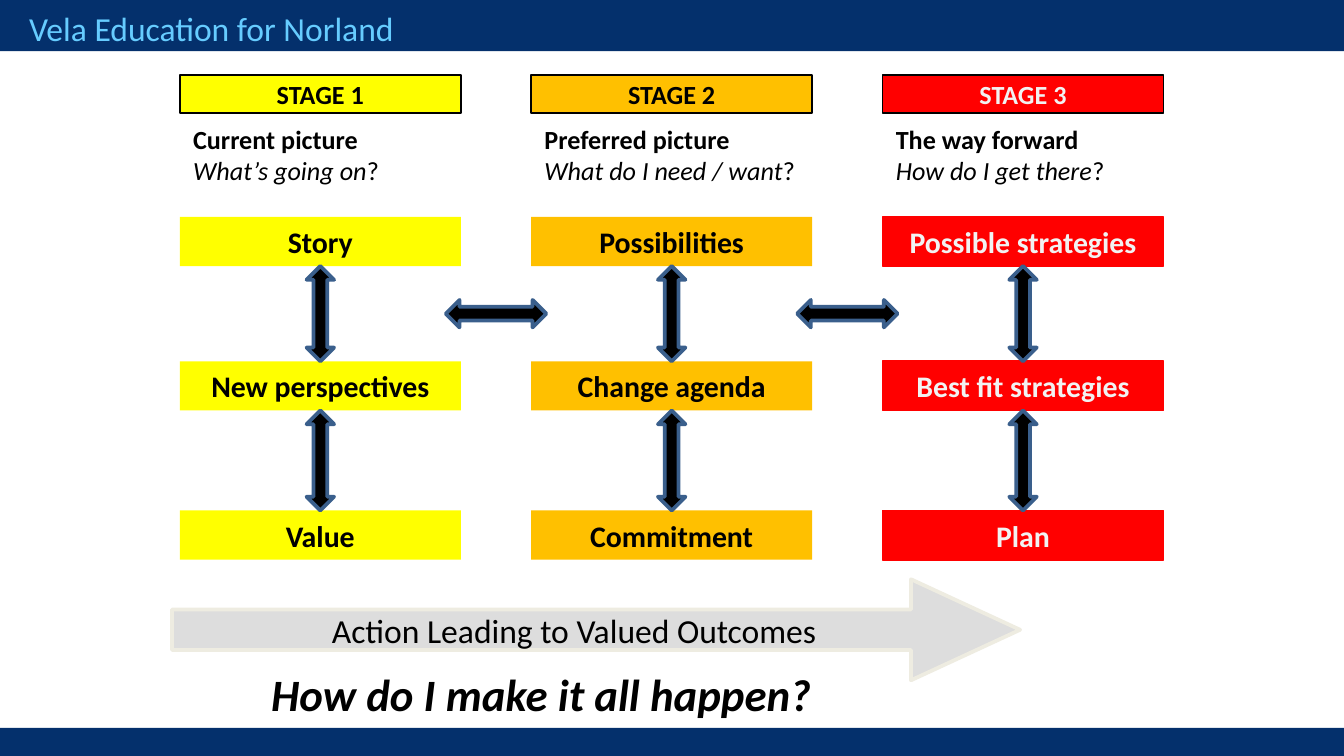
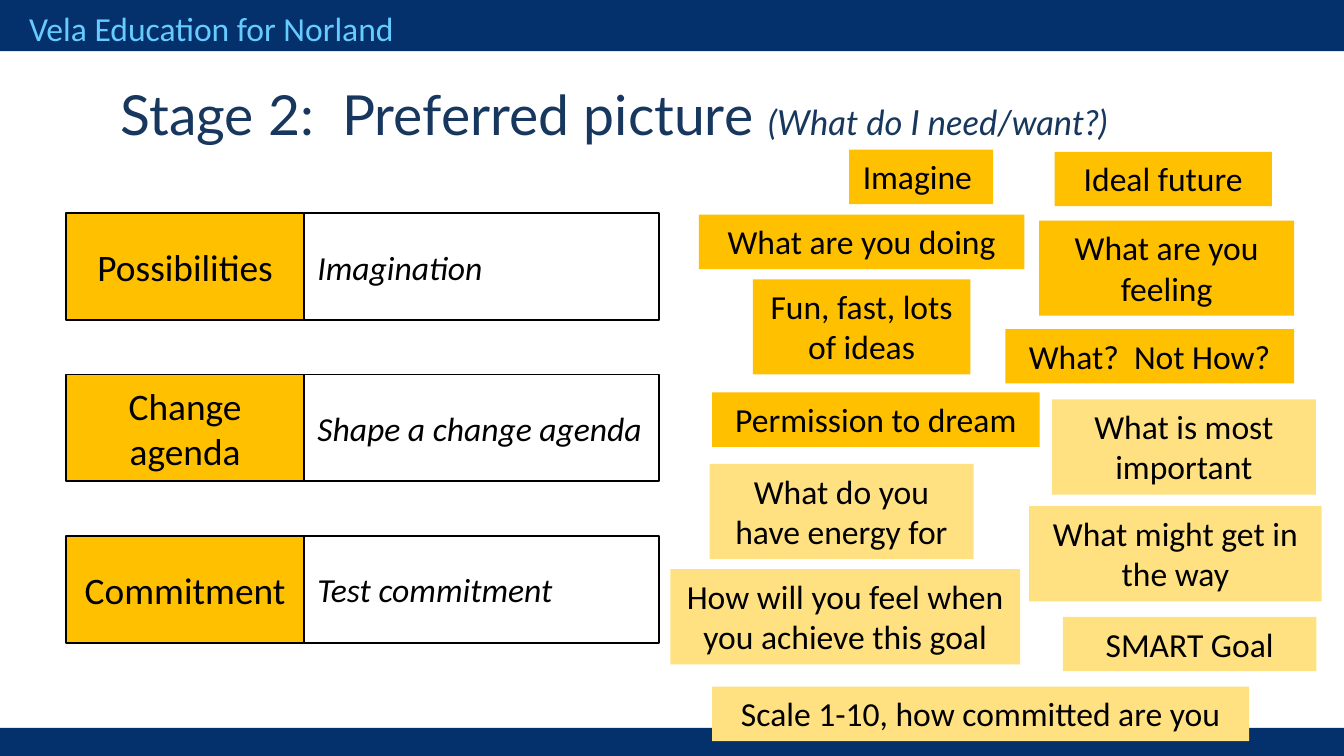
from dataclasses import dataclass
from typing import NamedTuple

from pptx import Presentation
from pptx.dml.color import RGBColor
from pptx.enum.shapes import MSO_SHAPE
from pptx.enum.text import MSO_ANCHOR, PP_ALIGN
from pptx.util import Cm, Pt


@dataclass(frozen=True)
class Theme:
    navy: str = "04306C"
    sky: str = "66CCFF"
    title: str = "17375E"
    black: str = "000000"
    pale: str = "F2F2F2"
    yellow: str = "FFFF00"
    amber: str = "FFC000"
    light_amber: str = "FFE181"
    red: str = "FF0000"
    arrow_line: str = "3A5F8C"
    grey: str = "DDDDDD"
    cream: str = "EEECE1"
    font: str = "Calibri"
    title_font: str = "Lato"
    small: float = 14
    step: float = 16
    body: float = 18
    label: float = 20
    question: float = 24
    heading: float = 29.6
    subheading: float = 18.5


T = Theme()


class Box(NamedTuple):
    x: float
    y: float
    w: float
    h: float

    def inner(self, dx, dy, w, h):
        """Return a box offset from this box's top left corner."""
        return Box(self.x + dx, self.y + dy, w, h)

    def lengths(self):
        return [Cm(v) for v in self]


class Run(NamedTuple):
    text: str
    size: float = T.body
    color: str = T.black
    bold: bool = False
    italic: bool = False
    font: str = T.font


class Stage(NamedTuple):
    name: str
    heading: str
    question: str
    steps: tuple
    fill: str
    ink: str = T.black
    step_line: str | None = None


class Note(NamedTuple):
    text: str
    dx: float
    dy: float
    w: float
    lines: int = 1
    fill: str = T.amber


PAGE = Box(0, 0, 25.4, 14.29)

STAGES = (
    Stage("STAGE 1", "Current picture", "What’s going on",
          ("Story", "New perspectives", "Value"), T.yellow),
    Stage("STAGE 2", "Preferred picture", "What do I need / want",
          ("Possibilities", "Change agenda", "Commitment"), T.amber),
    Stage("STAGE 3", "The way forward", "How do I get there",
          ("Possible strategies", "Best fit strategies", "Plan"), T.red, T.pale, T.red),
)
COLUMN_W, COLUMN_PITCH = 5.31, 6.64
STEP_TOPS, STEP_H = (2.68, 5.41, 8.23), 0.93
ARROW_THICK, ARROW_LONG = 0.52, 1.9

AIMS = (
    ("Possibilities", "Imagination"),
    ("Change agenda", "Shape a change agenda"),
    ("Commitment", "Test commitment"),
)

NOTES = (
    Note("Imagine ", 3.38, 0, 2.72),
    Note("Ideal future", 7.26, 0.04, 4.11),
    Note("What are you doing", 0.54, 1.23, 6.15),
    Note("What are you feeling", 6.97, 1.34, 4.82, 2),
    Note("What?  Not How?", 6.33, 3.39, 5.46),
    Note("Fun, fast, lots of ideas", 1.56, 2.45, 4.11, 2),
    Note("Permission to dream", 0.79, 4.59, 6.19),
    Note("What is most important", 7.21, 4.72, 4.99, 2, T.light_amber),
    Note("SMART Goal", 7.42, 8.83, 4.79, 1, T.light_amber),
    Note("How will you feel when you achieve this goal", 0, 7.93, 6.61, 2, T.light_amber),
    Note("What do you have energy for", 0.74, 5.94, 4.99, 2, T.light_amber),
    Note("What might get in the way", 6.78, 6.74, 5.53, 2, T.light_amber),
    Note("Scale 1-10, how committed are you", 0.79, 10.15, 10.15, 1, T.light_amber),
)


def write(sp, paragraphs, align=PP_ALIGN.LEFT, anchor=MSO_ANCHOR.TOP, wrap=True):
    tf = sp.text_frame
    tf.word_wrap = wrap
    tf.vertical_anchor = anchor
    for i, runs in enumerate(paragraphs):
        p = tf.paragraphs[0] if i == 0 else tf.add_paragraph()
        p.alignment = align
        for run in runs:
            r = p.add_run()
            r.text = run.text
            r.font.name = run.font
            r.font.size = Pt(run.size)
            r.font.bold = run.bold
            r.font.italic = run.italic
            r.font.color.rgb = RGBColor.from_string(run.color)


def add_text(s, box, *paragraphs, align=PP_ALIGN.LEFT):
    write(s.shapes.add_textbox(*box.lengths()), paragraphs, align)


def add_figure(s, box, fill=None, line=None, weight=1, kind=MSO_SHAPE.RECTANGLE):
    sp = s.shapes.add_shape(kind, *box.lengths())
    sp.shadow.inherit = False
    if fill:
        sp.fill.solid()
        sp.fill.fore_color.rgb = RGBColor.from_string(fill)
    else:
        sp.fill.background()
    if line:
        sp.line.color.rgb = RGBColor.from_string(line)
        sp.line.width = Pt(weight)
    else:
        sp.line.fill.background()
    return sp


def add_label(s, box, run, fill=None, line=None, align=PP_ALIGN.CENTER,
              anchor=MSO_ANCHOR.MIDDLE):
    write(add_figure(s, box, fill, line), [[run]], align, anchor)


def add_double_arrow(s, box, kind):
    add_figure(s, box, T.black, T.arrow_line, 2, kind)


def add_frame(s, box):
    """Draw the bands and organisation name found on every slide."""
    add_figure(s, box.inner(0, 0, box.w, 0.97), T.navy)
    add_figure(s, box.inner(0, box.h - 0.53, box.w, 0.53), T.navy)
    add_text(s, box.inner(0.3, 0.03, 10.8, 1.02),
             [Run("Vela Education for Norland", color=T.sky)])


def add_stage(s, box, stage):
    add_label(s, box.inner(0, 0, box.w, 0.71),
              Run(stage.name, T.small, stage.ink, bold=True), stage.fill, T.black)
    add_text(s, box.inner(0, 0.79, box.w, 1.45),
             [Run(stage.heading, T.small, bold=True)],
             [Run(stage.question, T.small, italic=True), Run("?", T.small)])
    for top, step in zip(STEP_TOPS, stage.steps):
        add_label(s, box.inner(0, top, box.w, STEP_H),
                  Run(step, T.step, stage.ink, bold=True), stage.fill, stage.step_line)


def add_stage_arrows(s, box):
    """Link the steps within each column, then neighbouring columns."""
    for i in range(len(STAGES)):
        x = i * COLUMN_PITCH + (COLUMN_W - ARROW_THICK) / 2
        for top, below in zip(STEP_TOPS, STEP_TOPS[1:]):
            y = top + STEP_H
            add_double_arrow(s, box.inner(x, y, ARROW_THICK, below - y),
                             MSO_SHAPE.UP_DOWN_ARROW)
    y = (STEP_TOPS[0] + STEP_H + STEP_TOPS[1] - ARROW_THICK) / 2
    for i in range(len(STAGES) - 1):
        x = i * COLUMN_PITCH + (COLUMN_W + COLUMN_PITCH - ARROW_LONG) / 2
        add_double_arrow(s, box.inner(x, y, ARROW_LONG, ARROW_THICK),
                         MSO_SHAPE.LEFT_RIGHT_ARROW)


def add_outcome(s, box):
    add_text(s, box.inner(1.2, 1.52, 11.56, 1.27),
             [Run("How do I make it all happen?", T.question, bold=True, italic=True)],
             align=PP_ALIGN.CENTER)
    sp = add_figure(s, box.inner(0, 0, box.w, 1.91), T.grey, T.cream, 2,
                    MSO_SHAPE.RIGHT_ARROW)
    sp.adjustments[0] = 0.4
    sp.adjustments[1] = 1.08
    write(sp, [[Run("Action Leading to Valued Outcomes")]],
          PP_ALIGN.CENTER, MSO_ANCHOR.MIDDLE, wrap=False)


def add_aims(s, box):
    """Stack rows of a filled label beside its description."""
    label_w, row_h = 4.5, 2.02
    pitch = (box.h - row_h) / (len(AIMS) - 1)
    for i, (name, aim) in enumerate(AIMS):
        add_label(s, box.inner(0, i * pitch, label_w, row_h),
                  Run(name, T.label), T.amber, T.black)
        add_label(s, box.inner(label_w, i * pitch, box.w - label_w, row_h),
                  Run(aim, italic=True), line=T.black, align=PP_ALIGN.LEFT)


def add_notes(s, box):
    for note in NOTES:
        h = 0.26 + 0.77 * note.lines
        add_label(s, box.inner(note.dx, note.dy, note.w, h), Run(note.text),
                  note.fill, anchor=MSO_ANCHOR.TOP)


def add_slide(prs):
    s = prs.slides.add_slide(prs.slide_layouts[6])
    add_frame(s, PAGE)
    return s


def build_stages_slide(prs):
    s = add_slide(prs)
    grid = PAGE.inner(3.4, 1.42, 18.59, 9.16)
    for i, stage in enumerate(STAGES):
        add_stage(s, grid.inner(i * COLUMN_PITCH, 0, COLUMN_W, grid.h), stage)
    add_stage_arrows(s, grid)
    add_outcome(s, PAGE.inner(3.25, 10.95, 16.03, 2.79))


def build_preferred_slide(prs):
    s = add_slide(prs)
    add_notes(s, PAGE.inner(12.67, 2.83, 12.31, 11.18))
    add_text(s, PAGE.inner(2.03, 1.4, 21.34, 1.45),
             [Run("Stage 2:  Preferred picture ", T.heading, T.title, font=T.title_font),
              Run("(What do I need/want?)", T.subheading, T.title, italic=True,
                  font=T.title_font)])
    add_aims(s, PAGE.inner(1.25, 4.03, 11.21, 8.12))


def main():
    prs = Presentation()
    prs.slide_width, prs.slide_height = Cm(PAGE.w), Cm(PAGE.h)
    build_stages_slide(prs)
    build_preferred_slide(prs)
    prs.save("out.pptx")


if __name__ == "__main__":
    main()
